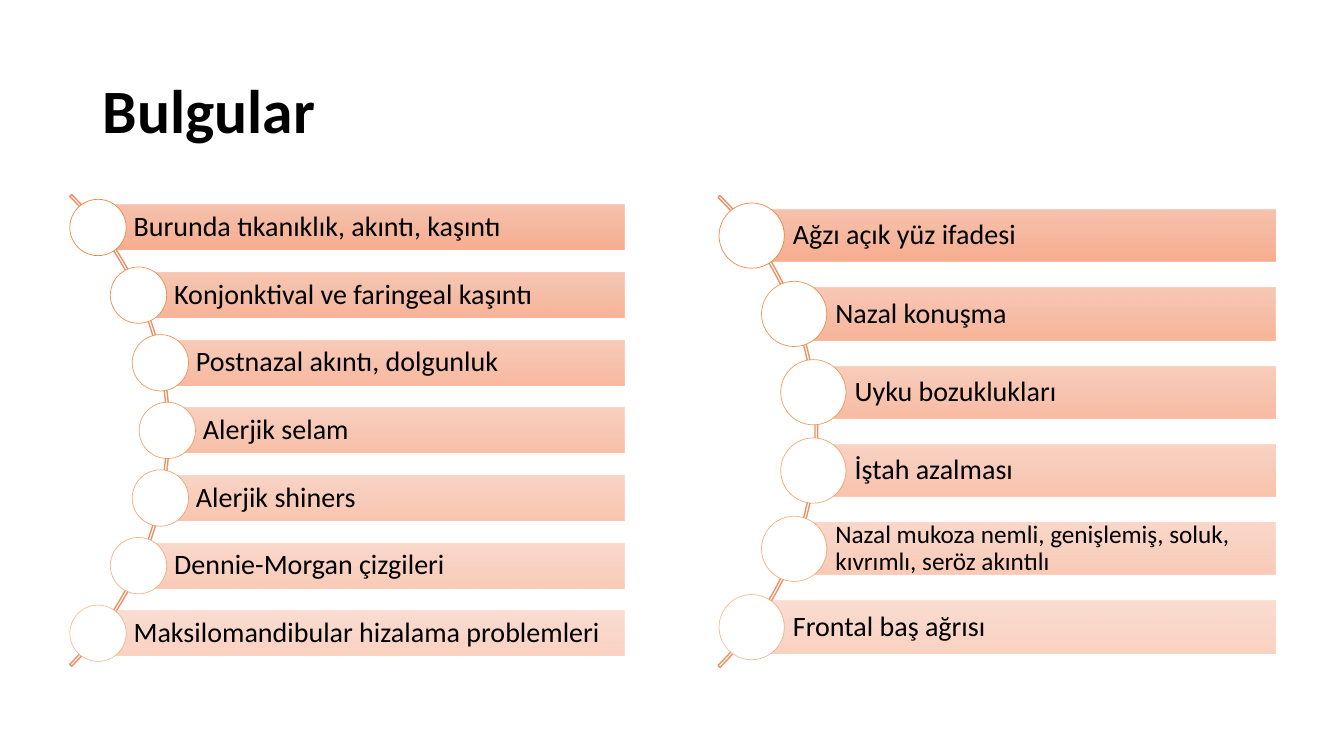
from math import sqrt

from lxml.etree import SubElement
from pptx import Presentation
from pptx.dml.color import RGBColor
from pptx.enum.shapes import MSO_SHAPE
from pptx.enum.text import MSO_ANCHOR, PP_ALIGN
from pptx.oxml import parse_xml
from pptx.oxml.ns import nsdecls, qn
from pptx.util import Inches, Pt

ARC_RADIUS = 3.31
DISC_TRACK_RADIUS = 3.29
ARC_CENTER_OFFSET = -2.26
BAR_STOPS = [(0, "F7BDA5"), (50, "F5B196"), (100, "F8A582")]
STRONGEST, FAINTEST = 90, 50

LEFT_FINDINGS = [
    ("Burunda tıkanıklık, akıntı, kaşıntı", 20),
    ("Konjonktival ve faringeal kaşıntı", 20),
    ("Postnazal akıntı, dolgunluk", 20),
    ("Alerjik selam", 20),
    ("Alerjik shiners", 20),
    ("Dennie-Morgan çizgileri", 20),
    ("Maksilomandibular hizalama problemleri", 20),
]
RIGHT_FINDINGS = [
    ("Ağzı açık yüz ifadesi", 20),
    ("Nazal konuşma", 20),
    ("Uyku bozuklukları", 20),
    ("İştah azalması", 20),
    ("Nazal mukoza nemli, genişlemiş, soluk, kıvrımlı, seröz akıntılı", 18),
    ("Frontal baş ağrısı", 20),
]


def color(hex_value):
    return RGBColor.from_string(hex_value)


def apply(target, formats):
    for attribute, value in formats.items():
        setattr(target, attribute, value)


def write(frame, text, size, bold, insets):
    apply(frame, dict(insets, word_wrap=True, vertical_anchor=MSO_ANCHOR.MIDDLE))
    frame.text = text
    paragraph = frame.paragraphs[0]
    apply(paragraph, {"alignment": PP_ALIGN.LEFT, "line_spacing": 0.9})
    apply(paragraph.font, {"name": "Calibri", "size": Pt(size), "bold": bold})
    paragraph.font.color.rgb = color("000000")


def add_part(group, preset, left, top, width, height):
    part = group.shapes.add_shape(
        preset, Inches(left), Inches(top), Inches(width), Inches(height)
    )
    part.shadow.inherit = False
    part.fill.background()
    return part


def outline(part, hex_value, width):
    part.line.color.rgb = color(hex_value)
    part.line.width = Pt(width)


def fade_fill(bar, opacity):
    stops = "".join(
        f'<a:gs pos="{position * 1000}"><a:srgbClr val="{hex_value}">'
        f'<a:alpha val="{round(opacity * 1000)}"/></a:srgbClr></a:gs>'
        for position, hex_value in BAR_STOPS
    )
    gradient = parse_xml(
        f'<a:gradFill {nsdecls("a")} rotWithShape="1"><a:gsLst>{stops}</a:gsLst>'
        '<a:lin ang="5400000" scaled="0"/></a:gradFill>'
    )
    properties = bar._element.spPr
    properties.replace(properties.find(qn("a:noFill")), gradient)


def add_title(slide, left, top, width, height):
    title = slide.shapes.title
    apply(title, {"left": Inches(left), "top": Inches(top),
                  "width": Inches(width), "height": Inches(height)})
    write(title.text_frame, "Bulgular", 44, True, {})


def add_finding(group, center_x, center_y, right, bar_height, opacity, text, size):
    bar = add_part(group, MSO_SHAPE.RECTANGLE, center_x, center_y - bar_height / 2,
                   right - center_x, bar_height)
    fade_fill(bar, opacity)
    bar.line.fill.background()
    margin = Inches(0.06 if size == 20 else 0.05)
    insets = {"margin_left": Inches(bar_height * 0.79), "margin_right": margin,
              "margin_top": margin, "margin_bottom": margin}
    write(bar.text_frame, text, size, False, insets)

    diameter = bar_height * 1.25
    disc = add_part(group, MSO_SHAPE.OVAL, center_x - diameter / 2,
                    center_y - diameter / 2, diameter, diameter)
    disc.fill.solid()
    disc.fill.fore_color.rgb = color("FFFFFF")
    outline(disc, "ED7D31", 0.5)
    line_color = disc._element.spPr.find(qn("a:ln")).find(".//" + qn("a:srgbClr"))
    SubElement(line_color, qn("a:alpha"), val=str(round(opacity * 1000)))


def add_findings(slide, left, top, width, height, findings):
    group = slide.shapes.add_group_shape()
    arc_x = left + ARC_CENTER_OFFSET
    middle = top + height / 2
    arc = add_part(group, MSO_SHAPE.BLOCK_ARC, arc_x - ARC_RADIUS,
                   middle - ARC_RADIUS, 2 * ARC_RADIUS, 2 * ARC_RADIUS)
    for index, value in enumerate((189, 27, 0.004)):
        arc.adjustments[index] = value
    outline(arc, "EF9166", 1)

    count = len(findings)
    bar_height = height / (1.5 * count + 0.5)
    for index, (text, size) in enumerate(findings):
        rise = (index - (count - 1) / 2) * 1.5 * bar_height
        center_x = arc_x + sqrt(DISC_TRACK_RADIUS**2 - rise**2)
        opacity = STRONGEST + (FAINTEST - STRONGEST) * index / (count - 1)
        add_finding(group, center_x, middle + rise, left + width, bar_height,
                    opacity, text, size)


def main():
    presentation = Presentation()
    apply(presentation, {"slide_width": Inches(13.33), "slide_height": Inches(7.5)})
    slide = presentation.slides.add_slide(presentation.slide_layouts[5])
    add_title(slide, 0.92, 0.4, 11.5, 1.45)
    add_findings(slide, 0.63, 1.81, 5.56, 4.92, LEFT_FINDINGS)
    add_findings(slide, 7.06, 1.82, 5.59, 4.92, RIGHT_FINDINGS)
    presentation.save("out.pptx")


if __name__ == "__main__":
    main()
